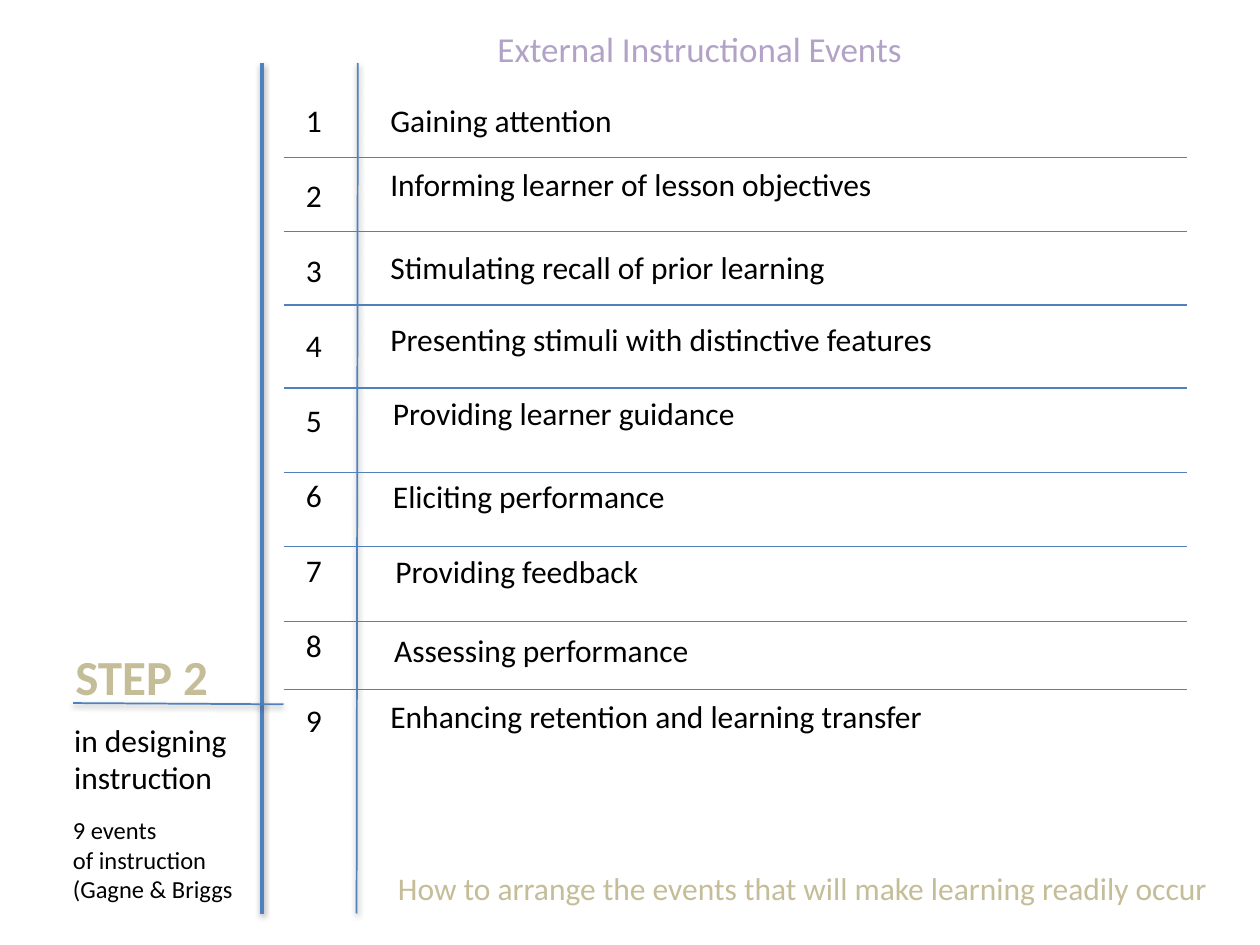
"""Builds a slide listing the nine external events of instruction."""
from dataclasses import dataclass

from pptx import Presentation
from pptx.dml.color import RGBColor
from pptx.enum.shapes import MSO_CONNECTOR
from pptx.enum.text import MSO_AUTO_SIZE
from pptx.util import Inches, Pt

STRAIGHT = MSO_CONNECTOR.STRAIGHT
FIT_SHAPE = MSO_AUTO_SIZE.SHAPE_TO_FIT_TEXT


@dataclass(frozen=True)
class Theme:
    font: str = "Calibri"
    ink: str = "000000"
    sand: str = "C4BD97"
    lilac: str = "B3A2C7"
    rule: str = "4F81BD"
    step: int = 28
    heading: int = 20
    body: int = 18
    note: int = 14


THEME = Theme()

prs = Presentation()
prs.slide_width, prs.slide_height = Inches(10), Inches(7.5)
slide = prs.slides.add_slide(prs.slide_layouts[6])


def add_text(text, *, left, top, width, height, size=THEME.body,
             color=THEME.ink, bold=False, gap=0):
    box = slide.shapes.add_textbox(Inches(left), Inches(top), Inches(width), Inches(height))
    frame = box.text_frame
    frame.word_wrap = False
    frame.auto_size = FIT_SHAPE
    frame.text = text
    for paragraph in frame.paragraphs:
        paragraph.space_after = Pt(gap)
        font = paragraph.runs[0].font
        font.name, font.size, font.bold = THEME.font, Pt(size), bold
        font.color.rgb = RGBColor.from_string(color)


def add_rule(x1, y1, x2, y2, weight):
    rule = slide.shapes.add_connector(STRAIGHT, Inches(x1), Inches(y1), Inches(x2), Inches(y2))
    rule.line.color.rgb = RGBColor.from_string(THEME.rule)
    rule.line.width = Pt(weight)


add_text("STEP 2", left=0.5, top=5.08, width=1.27, height=0.57,
         size=THEME.step, color=THEME.sand, bold=True)
add_text("in designing\ninstruction", left=0.49, top=5.67, width=1.43, height=0.71)
add_text("9 events\nof instruction\n(Gagne & Briggs", left=0.48, top=6.42,
         width=1.48, height=0.81, size=THEME.note)
add_text("External Instructional Events", left=3.85, top=0.17, width=3.44, height=0.44,
         size=THEME.heading, color=THEME.lilac)
add_text("How to arrange the events that will make learning readily occur",
         left=3.06, top=6.85, width=6.69, height=0.4, color=THEME.sand)

add_rule(2.08, 0.5, 2.08, 7.25, 2)
add_rule(0.58, 5.58, 2.25, 5.59, 1)
add_rule(2.84, 0.5, 2.83, 7.25, 1)
for divider_y in (1.25, 1.84, 2.42, 3.08, 3.75, 4.34, 4.93, 5.47):
    add_rule(2.25, divider_y, 9.42, divider_y, 0.75)

events = [
    ("Gaining attention", 3, 0.75, 1.98),
    ("Informing learner of lesson objectives", 3, 1.26, 4.06),
    ("Stimulating recall of prior learning", 3, 1.92, 3.69),
    ("Presenting stimuli with distinctive features", 3, 2.49, 4.55),
    ("Providing learner guidance", 3.02, 3.08, 2.94),
    ("Eliciting performance", 3.02, 3.74, 2.38),
    ("Providing feedback", 3.04, 4.33, 2.15),
    ("Assessing performance", 3.03, 4.96, 2.56),
    ("Enhancing retention and learning transfer", 3, 5.48, 4.47),
]
event_numbers = "\n".join(str(number) for number in range(1, len(events) + 1))
add_text(event_numbers, left=2.33, top=0.75, width=0.33, height=5.25, gap=21.25)
for event, left, top, width in events:
    add_text(event, left=left, top=top, width=width, height=0.4)

prs.save("out.pptx")
